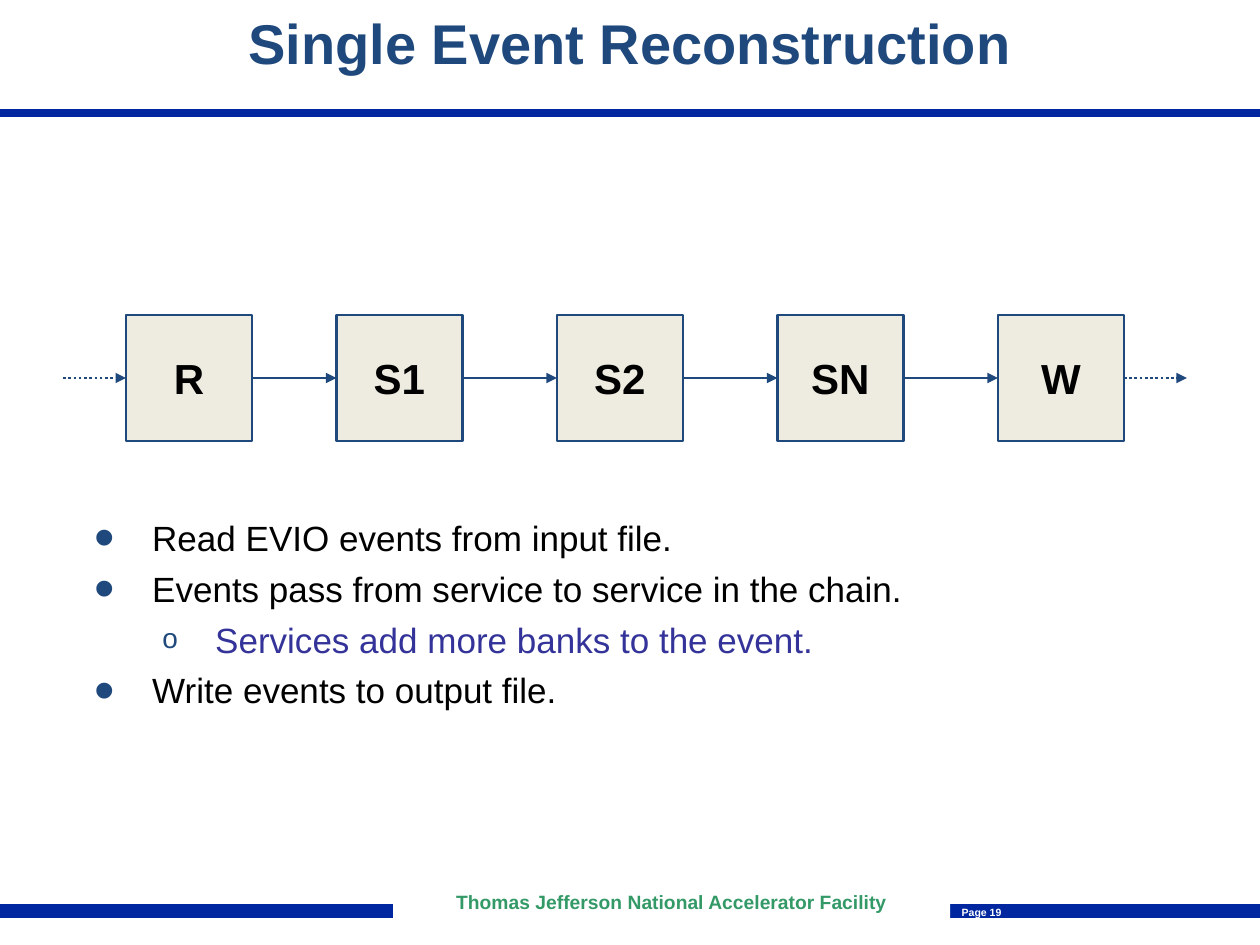
from dataclasses import dataclass

from lxml import etree
from pptx import Presentation
from pptx.dml.color import RGBColor
from pptx.enum.dml import MSO_LINE
from pptx.enum.shapes import MSO_CONNECTOR, MSO_SHAPE
from pptx.enum.text import MSO_ANCHOR, PP_ALIGN
from pptx.oxml.ns import qn
from pptx.util import Inches, Pt

RECT = MSO_SHAPE.RECTANGLE
STRAIGHT = MSO_CONNECTOR.STRAIGHT
DOT = MSO_LINE.ROUND_DOT
LEFT, CENTER = PP_ALIGN.LEFT, PP_ALIGN.CENTER
TOP, MIDDLE, BOTTOM = MSO_ANCHOR.TOP, MSO_ANCHOR.MIDDLE, MSO_ANCHOR.BOTTOM


@dataclass(frozen=True)
class Theme:
    font: str = "Arial"
    navy: str = "1F497D"
    bar: str = "00279F"
    box: str = "EEECE1"
    green: str = "339966"
    violet: str = "333399"
    black: str = "000000"
    white: str = "FFFFFF"
    title: int = 32
    label: int = 24
    body: int = 20
    lab: int = 11
    page: int = 6


THEME = Theme()
STAGES = [("R", 1), ("S1", 2.67), ("S2", 4.42), ("SN", 6.17), ("W", 7.92)]
SIDE, BOX_TOP, STUB = 1, 2.5, 0.5
POINTS = [
    (0, "Read EVIO events from input file."),
    (0, "Events pass from service to service in the chain."),
    (1, "Services add more banks to the event."),
    (0, "Write events to output file."),
]
# For each level: margin, hang, mark, mark size in percent, text colour
LEVELS = [
    (0.5, 0.46, "•", 167, THEME.black),
    (1, 0.42, "o", 80, THEME.violet),
]


def style(para, size, color, bold=True, align=CENTER):
    para.alignment = align
    for run in para.runs:
        font = run.font
        font.name = THEME.font
        font.size = Pt(size)
        font.bold = bold
        font.color.rgb = RGBColor.from_string(color)


def set_frame(shape, inset, anchor=TOP, wrap=True):
    frame = shape.text_frame
    frame.word_wrap = wrap
    frame.vertical_anchor = anchor
    frame.margin_left = frame.margin_right = Inches(inset)
    frame.margin_top = frame.margin_bottom = Inches(inset)
    return frame


def add_text(slide, area, text, size, color, inset=0, anchor=TOP, wrap=True):
    shape = slide.shapes.add_textbox(*map(Inches, area))
    frame = set_frame(shape, inset, anchor, wrap)
    frame.text = text
    style(frame.paragraphs[0], size, color)


def add_rect(slide, area, fill, text, size, color, inset=0, anchor=MIDDLE):
    shape = slide.shapes.add_shape(RECT, *map(Inches, area))
    shape.shadow.inherit = False
    shape.fill.solid()
    shape.fill.fore_color.rgb = RGBColor.from_string(fill)
    shape.line.fill.background()
    frame = set_frame(shape, inset, anchor)
    frame.text = text
    style(frame.paragraphs[0], size, color)
    return shape


def add_line(slide, start, end, y, color, width):
    line = slide.shapes.add_connector(
        STRAIGHT, Inches(start), Inches(y), Inches(end), Inches(y))
    line.line.color.rgb = RGBColor.from_string(color)
    line.line.width = Pt(width)
    etree.SubElement(line.element.spPr, qn("a:effectLst"))
    return line


def add_arrow(slide, start, end, dash=None):
    y = BOX_TOP + SIDE / 2
    line = add_line(slide, start, end, y, THEME.navy, 1.5).line
    if dash:
        line.dash_style = dash
    etree.SubElement(line._get_or_add_ln(), qn("a:tailEnd"), type="triangle")


def add_mark(para, level):
    """Give the paragraph the hanging bullet of its level."""
    margin, hang, mark, percent, _ = LEVELS[level]
    props = para._p.get_or_add_pPr()
    props.set("marL", str(Inches(margin)))
    props.set("indent", str(-Inches(hang)))
    color = etree.SubElement(props, qn("a:buClr"))
    etree.SubElement(color, qn("a:srgbClr"), val=THEME.navy)
    etree.SubElement(props, qn("a:buSzPct"), val=str(percent * 1000))
    etree.SubElement(props, qn("a:buFont"), typeface=THEME.font)
    etree.SubElement(props, qn("a:buChar"), char=mark)


def add_points(slide):
    area = map(Inches, (0.61, 4, 9, 2.66))
    frame = set_frame(slide.shapes.add_textbox(*area), 0.1)
    frame.text = "\n".join(text for _, text in POINTS)
    for i, (para, (level, _)) in enumerate(zip(frame.paragraphs, POINTS)):
        para.level = level
        add_mark(para, level)
        para.space_before = Pt(5 if i else 0)
        style(para, THEME.body, LEVELS[level][-1], False, LEFT)


def add_chain(slide):
    for name, left in STAGES:
        box = add_rect(slide, (left, BOX_TOP, SIDE, SIDE), THEME.box, name,
                       THEME.label, THEME.black, 0.1)
        box.line.color.rgb = RGBColor.from_string(THEME.navy)
        box.line.width = Pt(1.5)
    lefts = [left for _, left in STAGES]
    for left, follow in zip(lefts, lefts[1:]):
        add_arrow(slide, left + SIDE, follow)
    for start in (lefts[0] - STUB, lefts[-1] + SIDE):
        add_arrow(slide, start, start + STUB, DOT)


def add_footer(slide):
    add_line(slide, 0, 10, 7.23, THEME.bar, 8)
    lab = add_rect(slide, (3.12, 6.97, 4.42, 0.42), THEME.white,
                   "Thomas Jefferson National Accelerator Facility",
                   THEME.lab, THEME.green, anchor=TOP)
    lab.text_frame.margin_top = Inches(0.13)
    lab.text_frame.paragraphs[0].line_spacing = 0.8
    add_text(slide, (7.63, 7.19, 0.32, 0.1), "Page 19",
             THEME.page, THEME.white, wrap=False)


def main():
    deck = Presentation()
    deck.slide_width, deck.slide_height = Inches(10), Inches(7.5)
    slide = deck.slides.add_slide(deck.slide_layouts[6])
    add_line(slide, 0, 10, 0.9, THEME.bar, 4.5)
    add_footer(slide)
    add_points(slide)
    add_chain(slide)
    add_text(slide, (0, 0, 10, 0.7), "Single Event Reconstruction",
             THEME.title, THEME.navy, 0.1, BOTTOM)
    deck.save("out.pptx")


if __name__ == "__main__":
    main()
